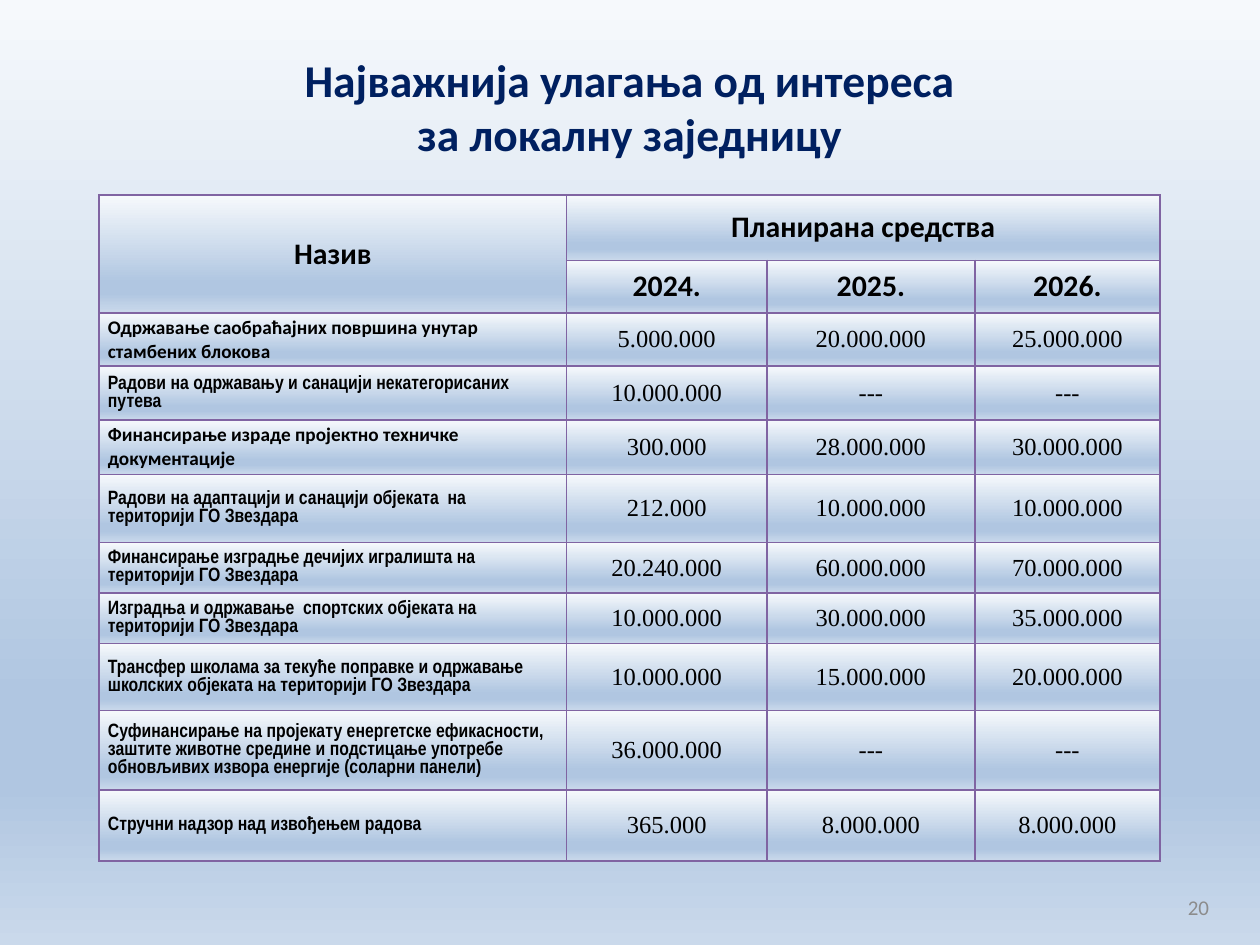
from dataclasses import dataclass

import lxml.etree
import pptx
import pptx.dml.color
import pptx.enum.text
import pptx.oxml.ns
import pptx.table
import pptx.text.text
import pptx.util

Pt = pptx.util.Pt
ALIGN = pptx.enum.text.PP_ALIGN
MIDDLE = pptx.enum.text.MSO_ANCHOR.MIDDLE


@dataclass(frozen=True)
class TextStyle:
    font: str
    size: float
    color: str
    bold: bool
    align: ALIGN = ALIGN.CENTER


@dataclass(frozen=True)
class Theme:
    title = TextStyle("Calibri", 26, "002060", True)
    header = TextStyle("Calibri", 17, "000000", True)
    wide_name = TextStyle("Calibri", 11, "000000", True, ALIGN.LEFT)
    narrow_name = TextStyle("Arial Narrow", 11, "000000", True, ALIGN.LEFT)
    amount = TextStyle("Times New Roman", 14, "000000", False)
    page_number = TextStyle("Calibri", 12, "8C8C8C", False, ALIGN.RIGHT)
    border_color = "8064A2"
    border_width = 1
    gradient = ((0, "F6F9FC"), (74, "B0C6E1"), (83, "B0C6E1"), (100, "CAD9EB"))
    gradient_angle = 90


THEME = Theme()


@dataclass(frozen=True)
class Investment:
    name: str
    amounts: tuple[str, str, str]
    height: float
    name_style: TextStyle = THEME.narrow_name


YEARS = ("2024.", "2025.", "2026.")
COLUMN_WIDTHS = (267.1, 114.5, 118.8, 105.8)
HEADER_HEIGHTS = (37.3, 30.2)
INVESTMENTS = (
    Investment("Одржавање caoбраћајних површина унутар стамбених блокова",
               ("5.000.000", "20.000.000", "25.000.000"), 30.3, THEME.wide_name),
    Investment("Радови на одржавању и санацији некатегорисаних путева",
               ("10.000.000", "---", "---"), 30.9),
    Investment("Финансирање израде пројектно техничке документације",
               ("300.000", "28.000.000", "30.000.000"), 30.9, THEME.wide_name),
    Investment("Радови на адаптацији и санацији објеката  на територији ГО Звездара",
               ("212.000", "10.000.000", "10.000.000"), 39.1),
    Investment("Финансирање изградње дечијих игралишта на територији ГО Звездара",
               ("20.240.000", "60.000.000", "70.000.000"), 28.8),
    Investment("Изградња и одржавање  спортских објеката на територији ГО Звездара",
               ("10.000.000", "30.000.000", "35.000.000"), 28.8),
    Investment("Трансфер школама за текуће поправке и одржавање школских објеката "
               "на територији ГО Звездара",
               ("10.000.000", "15.000.000", "20.000.000"), 38.4),
    Investment("Суфинансирање на пројекату енергетске ефикасности, заштите животне средине "
               "и подстицање употребе обновљивих извора енергије (соларни панели)",
               ("36.000.000", "---", "---"), 45.4),
    Investment("Стручни надзор над извођењем радова",
               ("365.000", "8.000.000", "8.000.000"), 40.5),
)


def add_xml(parent: lxml.etree._Element, tag: str, **attributes: object) -> lxml.etree._Element:
    child = lxml.etree.SubElement(parent, pptx.oxml.ns.qn(tag))
    for name, value in attributes.items():
        child.set(name, str(value))
    return child


def add_gradient(parent: lxml.etree._Element) -> lxml.etree._Element:
    gradient = add_xml(parent, "a:gradFill", rotWithShape=1)
    stops = add_xml(gradient, "a:gsLst")
    for percent, color in THEME.gradient:
        add_xml(add_xml(stops, "a:gs", pos=percent * 1000), "a:srgbClr", val=color)
    add_xml(gradient, "a:lin", ang=THEME.gradient_angle * 60000, scaled=0)
    return gradient


def paint_background(slide: pptx.slide.Slide) -> None:
    slide.background.fill.solid()
    properties = slide.element.find(".//" + pptx.oxml.ns.qn("p:bgPr"))
    properties.replace(properties[0], add_gradient(properties))


def write(frame: pptx.text.text.TextFrame, text: str, style: TextStyle) -> None:
    frame.text = text
    frame.word_wrap = True
    paragraph = frame.paragraphs[0]
    paragraph.alignment = style.align
    font_format = {"name": style.font, "size": Pt(style.size), "bold": style.bold}
    for run in paragraph.runs:
        for attribute, value in font_format.items():
            setattr(run.font, attribute, value)
        run.font.color.rgb = pptx.dml.color.RGBColor.from_string(style.color)


def decorate_cell(cell: pptx.table._Cell) -> None:
    """Set margins, then borders and gradient in the order the schema wants."""
    cell_format = {"margin_left": Pt(5), "margin_right": Pt(5), "margin_top": 0,
                   "margin_bottom": 0, "vertical_anchor": MIDDLE}
    for attribute, value in cell_format.items():
        setattr(cell, attribute, value)
    properties = cell._tc.get_or_add_tcPr()
    for side in ("a:lnL", "a:lnR", "a:lnT", "a:lnB"):
        line = add_xml(properties, side, w=Pt(THEME.border_width))
        add_xml(add_xml(line, "a:solidFill"), "a:srgbClr", val=THEME.border_color)
    add_gradient(properties)


def add_investment_table(slide: pptx.slide.Slide) -> None:
    heights = HEADER_HEIGHTS + tuple(item.height for item in INVESTMENTS)
    table = slide.shapes.add_table(
        len(heights), len(COLUMN_WIDTHS), Pt(56.7), Pt(111.5),
        Pt(sum(COLUMN_WIDTHS)), Pt(sum(heights))).table
    table.first_row = table.horz_banding = False
    for column, width in zip(table.columns, COLUMN_WIDTHS):
        column.width = Pt(width)
    for row, height in zip(table.rows, heights):
        row.height = Pt(height)
    for cell in table.iter_cells():
        decorate_cell(cell)

    table.cell(0, 0).merge(table.cell(1, 0))
    table.cell(0, 1).merge(table.cell(0, len(YEARS)))
    write(table.cell(0, 0).text_frame, "Назив", THEME.header)
    write(table.cell(0, 1).text_frame, "Планирана средства", THEME.header)
    for column, year in enumerate(YEARS, 1):
        write(table.cell(1, column).text_frame, year, THEME.header)
    for row, item in enumerate(INVESTMENTS, len(HEADER_HEIGHTS)):
        write(table.cell(row, 0).text_frame, item.name, item.name_style)
        for column, amount in enumerate(item.amounts, 1):
            write(table.cell(row, column).text_frame, amount, THEME.amount)


def main() -> None:
    presentation = pptx.Presentation()
    presentation.slide_width, presentation.slide_height = Pt(720), Pt(540)
    slide = presentation.slides.add_slide(presentation.slide_layouts[5])
    paint_background(slide)

    title = slide.shapes.title
    title_place = {"left": 36, "top": 21.6, "width": 648, "height": 78.5}
    for attribute, value in title_place.items():
        setattr(title, attribute, Pt(value))
    write(title.text_frame, "Најважнија улагања од интереса\vза локалну заједницу", THEME.title)
    title.text_frame.vertical_anchor = MIDDLE

    add_investment_table(slide)

    page_number = slide.shapes.add_textbox(Pt(530), Pt(504), Pt(168), Pt(28.8))
    write(page_number.text_frame, "20", THEME.page_number)
    page_number.text_frame.vertical_anchor = MIDDLE

    presentation.save("out.pptx")


if __name__ == "__main__":
    main()
